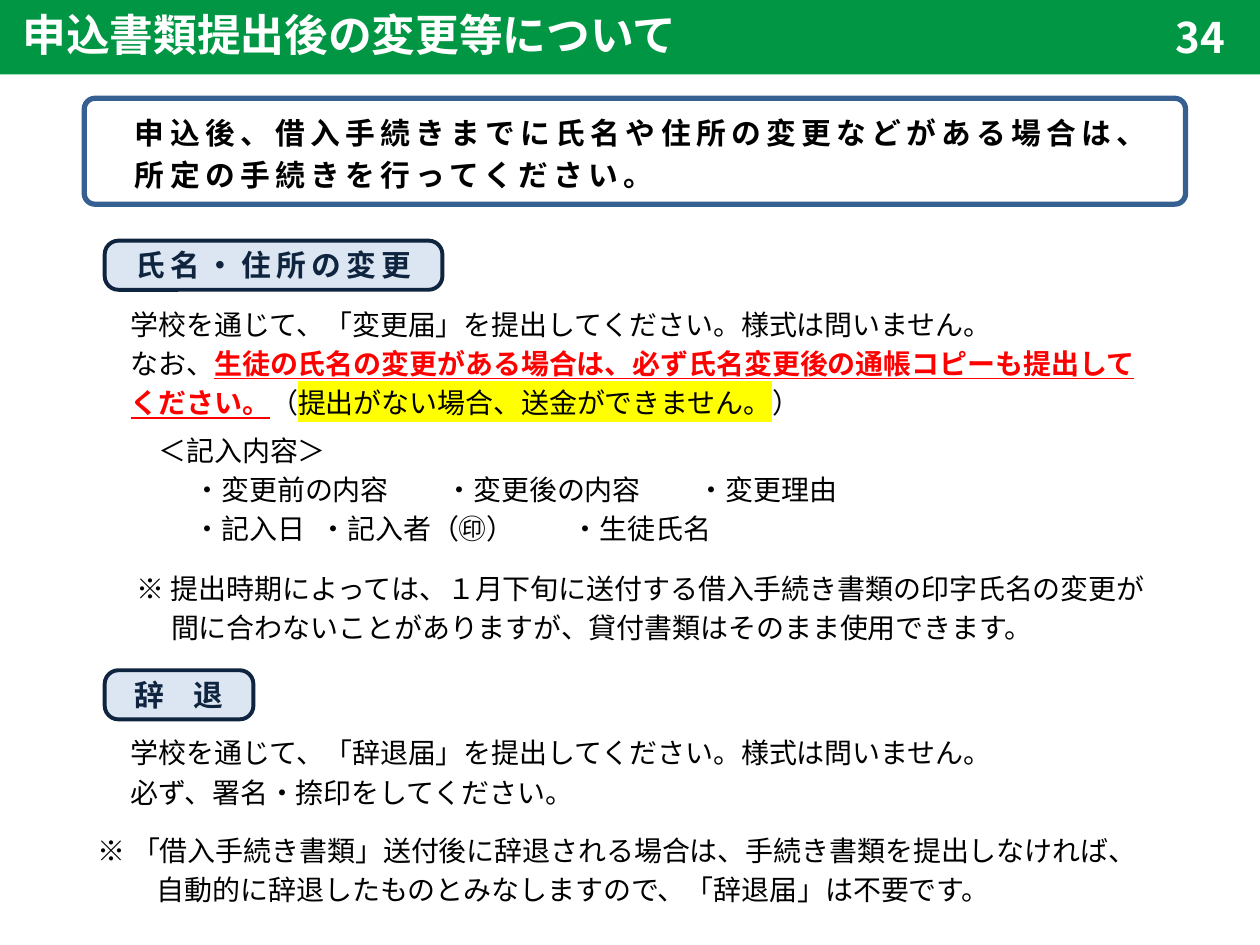
from lxml import etree
from pptx import Presentation
from pptx.dml.color import RGBColor
from pptx.enum.shapes import MSO_SHAPE
from pptx.enum.text import MSO_ANCHOR, MSO_TEXT_UNDERLINE_TYPE, PP_ALIGN
from pptx.oxml.ns import qn
from pptx.util import Pt

RECT, ROUNDED = MSO_SHAPE.RECTANGLE, MSO_SHAPE.ROUNDED_RECTANGLE
TOP, MIDDLE = MSO_ANCHOR.TOP, MSO_ANCHOR.MIDDLE
LEFT, CENTER = PP_ALIGN.LEFT, PP_ALIGN.CENTER
WAVY = MSO_TEXT_UNDERLINE_TYPE.WAVY_LINE

FONT = "Noto Sans CJK JP"
BLACK, WHITE, RED, YELLOW = "000000", "FFFFFF", "FF0000", "FFFF00"
GREEN, NAVY, BLUE, PALE = "009644", "0F243E", "376092", "DCE6F2"
BODY_LEFT, BODY_RIGHT = 74.6, 660


def rgb(value):
    return RGBColor.from_string(value)


def add_color(parent, value):
    etree.SubElement(parent, qn("a:srgbClr"), val=value)


def add_run(paragraph, text, size=16, color=BLACK, bold=False, underline=None,
            highlight=None, spacing=0):
    run = paragraph.add_run()
    run.text = text
    font = run.font
    font.size, font.bold, font.underline = Pt(size), bold, underline
    font.color.rgb = rgb(color)
    props = run._r.get_or_add_rPr()
    if spacing:
        props.set("spc", str(spacing * 100))
    if highlight:
        add_color(etree.SubElement(props, qn("a:highlight")), highlight)
        underline_fill = etree.SubElement(props, qn("a:uFill"))
        add_color(etree.SubElement(underline_fill, qn("a:solidFill")), highlight)
    font.name = FONT
    etree.SubElement(props, qn("a:ea"), typeface=FONT)


def set_layout(paragraph, pitch=None, before=0, indent=0, hanging=0, tabs=()):
    """Set line pitch, space before, indents and tab stops, all in points."""
    if pitch:
        paragraph.line_spacing = Pt(pitch)
    paragraph.space_before = Pt(before)
    props = paragraph._p.get_or_add_pPr()
    props.set("marL", str(Pt(indent)))
    props.set("indent", str(Pt(-hanging)))
    if tabs:
        stops = etree.SubElement(props, qn("a:tabLst"))
        for stop in tabs:
            etree.SubElement(stops, qn("a:tab"), pos=str(Pt(stop)), algn="l")


class Page:
    """Holds the slide and the style of its panels and body text."""
    pitch = 22.5

    def __init__(self, slide):
        self.shapes = slide.shapes

    def frame(self, shape, margins, anchor):
        frame = shape.text_frame
        frame.word_wrap = True
        frame.vertical_anchor = anchor
        (frame.margin_left, frame.margin_top,
         frame.margin_right, frame.margin_bottom) = map(Pt, margins)
        return frame

    def panel(self, kind, box, lines, fill=None, line=None, width=0, corner=0,
              margins=(7.2, 2.9, 7.2, 3.6), align=CENTER, pitch=None, **style):
        shape = self.shapes.add_shape(kind, *map(Pt, box))
        shape.shadow.inherit = False
        if corner:
            shape.adjustments[0] = corner
        if fill:
            shape.fill.solid()
            shape.fill.fore_color.rgb = rgb(fill)
        else:
            shape.fill.background()
        if line:
            shape.line.color.rgb = rgb(line)
            shape.line.width = Pt(width)
        else:
            shape.line.fill.background()
        frame = self.frame(shape, margins, MIDDLE)
        for number, text in enumerate(lines):
            paragraph = frame.add_paragraph() if number else frame.paragraphs[0]
            paragraph.alignment = align
            set_layout(paragraph, pitch)
            add_run(paragraph, text, bold=True, **style)

    def badge(self, top, width, text, spacing=0):
        self.panel(ROUNDED, (59.8, top, width, 28.1), [text], PALE, NAVY, 2.25,
                   0.28, size=17, color=NAVY, spacing=spacing)

    def body(self, left, top, height, paragraphs):
        """Add paragraphs, each given as (layout, [(text, format), ...])."""
        box = self.shapes.add_textbox(
            Pt(left), Pt(top), Pt(BODY_RIGHT - left), Pt(height))
        frame = self.frame(box, (0, 0, 0, 0), TOP)
        for number, (layout, runs) in enumerate(paragraphs):
            paragraph = frame.add_paragraph() if number else frame.paragraphs[0]
            paragraph.alignment = LEFT
            set_layout(paragraph, self.pitch, **layout)
            for text, style in runs:
                add_run(paragraph, text, **style)


def plain(text, **layout):
    return layout, [(text, {})]


def main():
    deck = Presentation()
    deck.slide_width, deck.slide_height = Pt(720), Pt(540)
    page = Page(deck.slides.add_slide(deck.slide_layouts[6]))

    page.panel(RECT, (0, 0, 720, 42.5), ["申込書類提出後の変更等について"], GREEN,
               margins=(12.8, 0, 7.2, 3.6), align=LEFT, size=25, color=WHITE)
    page.panel(RECT, (654.5, 2.9, 62.6, 36), ["34"], GREEN,
               margins=(7.2, 3.6, 7.2, 3.6), size=24, color=WHITE)
    page.panel(ROUNDED, (48.2, 56.2, 629.3, 60.5),
               ["申込後、借入手続きまでに氏名や住所の変更などがある場合は、",
                "所定の手続きを行ってください。"],
               line=BLUE, width=3, corner=0.1, margins=(27.2, 2.9, 7.2, 3.6),
               align=LEFT, pitch=24, size=17, spacing=3)

    page.badge(137.5, 193, "氏名・住所の変更", spacing=3)
    columns = [32 + 176 * column for column in range(3)]
    entries = [("変更前の内容", "変更後の内容", "変更理由"),
               ("記入日", "記入者（㊞）", "生徒氏名")]
    page.body(BODY_LEFT, 172.2, 200, [
        plain("学校を通じて、「変更届」を提出してください。様式は問いません。"),
        ({}, [("なお、", {}),
              ("生徒の氏名の変更がある場合は、必ず氏名変更後の通帳コピーも提出してください。",
               dict(color=RED, bold=True, underline=True)),
              ("（", {}),
              ("提出がない場合、送金ができません。",
               dict(underline=WAVY, highlight=YELLOW)),
              ("）", {})]),
        plain("＜記入内容＞", before=4.5, indent=16),
        *[plain("".join(f"\t・{entry}" for entry in row), tabs=columns)
          for row in entries],
        plain("※ 提出時期によっては、１月下旬に送付する借入手続き書類の印字氏名の変更が"
              "間に合わないことがありますが、貸付書類はそのまま使用できます。",
              before=11.5, indent=23.2, hanging=19.6),
    ])

    page.badge(383, 85, "辞　退")
    page.body(BODY_LEFT, 417.3, 45, [
        plain("学校を通じて、「辞退届」を提出してください。様式は問いません。"),
        plain("必ず、署名・捺印をしてください。"),
    ])
    page.body(56, 472.8, 45, [
        plain("※ 「借入手続き書類」送付後に辞退される場合は、手続き書類を提出しなければ、"
              "自動的に辞退したものとみなしますので、「辞退届」は不要です。",
              indent=33.7, hanging=33.7),
    ])
    deck.save("out.pptx")


if __name__ == "__main__":
    main()
